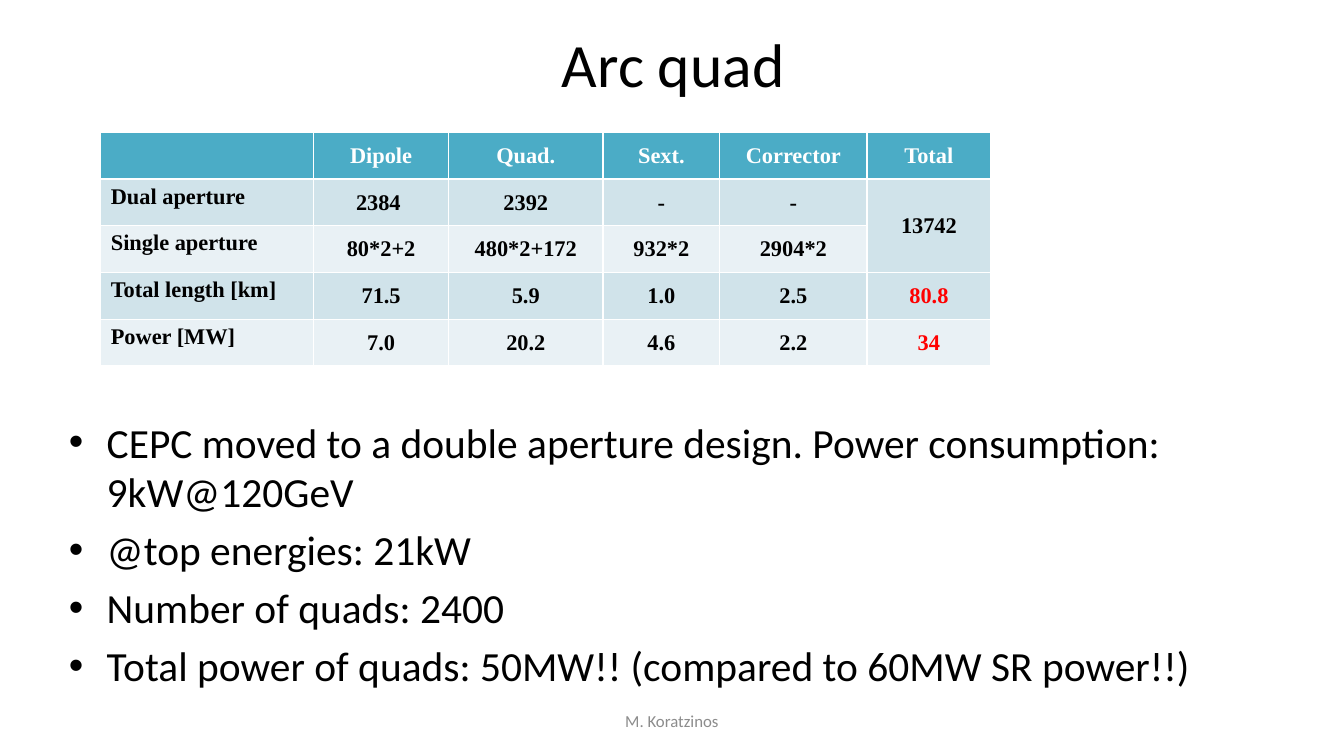
"""Build the arc quad slide with its magnet table and power notes."""
from pptx import Presentation
from pptx.dml.color import RGBColor
from pptx.enum.text import MSO_ANCHOR, MSO_AUTO_SIZE, PP_ALIGN
from pptx.util import Pt

TITLE = "Arc quad"
FOOTER = "M. Koratzinos"
BULLETS = [
    "CEPC moved to a double aperture design. Power consumption: 9kW@120GeV",
    "@top energies: 21kW",
    "Number of quads: 2400",
    "Total power of quads: 50MW!! (compared to 60MW SR power!!)",
]
MAGNETS = [
    ["", "Dipole", "Quad.", "Sext.", "Corrector", "Total"],
    ["Dual aperture", "2384 ", "2392", "-", "-", "13742"],
    ["Single aperture", "80*2+2", "480*2+172", "932*2", "2904*2", ""],
    ["Total length [km]", "71.5", "5.9", "1.0", "2.5", "80.8"],
    ["Power [MW]", "7.0", "20.2", "4.6", "2.2", "34"],
]
HIGHLIGHTS = {"80.8", "34"}
COLUMN_WIDTHS = [152, 96.5, 110.2, 83.5, 105.1, 88.6]
ROW_HEIGHT = 33.4
HEADER_FILL = "4BACC6"
BAND_FILLS = ["E9F1F5", "D0E3EA"]


def color(value):
    """Turn a hex string into a colour."""
    return RGBColor.from_string(value)


def place(shape, left, top, width, height):
    """Position a shape in points."""
    shape.left, shape.top = Pt(left), Pt(top)
    shape.width, shape.height = Pt(width), Pt(height)


def add_text(paragraph, text, size, font="Calibri", ink="000000", bold=False, align=None):
    """Add one formatted run to a paragraph."""
    run = paragraph.add_run()
    run.text = text
    run.font.size = Pt(size)
    run.font.name = font
    run.font.bold = bold
    run.font.color.rgb = color(ink)
    paragraph.alignment = align


def add_magnet_table(slide):
    """Add the table of magnet counts, lengths and power."""
    table = slide.shapes.add_table(
        len(MAGNETS), len(COLUMN_WIDTHS), Pt(72), Pt(94.5),
        Pt(sum(COLUMN_WIDTHS)), Pt(ROW_HEIGHT * len(MAGNETS))).table
    for column, width in zip(table.columns, COLUMN_WIDTHS):
        column.width = Pt(width)
    for row_index, texts in enumerate(MAGNETS):
        table.rows[row_index].height = Pt(ROW_HEIGHT)
        is_header = row_index == 0
        for column_index, text in enumerate(texts):
            cell = table.cell(row_index, column_index)
            cell.fill.solid()
            cell.fill.fore_color.rgb = color(HEADER_FILL if is_header else BAND_FILLS[row_index % 2])
            is_label = column_index == 0
            cell.vertical_anchor = MSO_ANCHOR.TOP if is_label else MSO_ANCHOR.MIDDLE
            if text:
                ink = "FFFFFF" if is_header else "FF0000" if text in HIGHLIGHTS else "000000"
                add_text(cell.text_frame.paragraphs[0], text, 16, "Times New Roman", ink, True,
                         PP_ALIGN.LEFT if is_label else PP_ALIGN.CENTER)
    table.cell(1, 5).merge(table.cell(2, 5))


def main():
    """Create the presentation and save it."""
    presentation = Presentation()
    presentation.slide_width, presentation.slide_height = Pt(960), Pt(540)
    slide = presentation.slides.add_slide(presentation.slide_layouts[1])

    title, body = slide.placeholders
    place(title, 49, 6, 864, 78)
    title.text_frame.vertical_anchor = MSO_ANCHOR.MIDDLE
    add_text(title.text_frame.paragraphs[0], TITLE, 44, align=PP_ALIGN.CENTER)

    place(body, 42, 294, 864, 198)
    frame = body.text_frame
    frame.auto_size = MSO_AUTO_SIZE.NONE
    for index, text in enumerate(BULLETS):
        paragraph = frame.add_paragraph() if index else frame.paragraphs[0]
        add_text(paragraph, text, 29.6)

    footer = slide.shapes.add_textbox(Pt(318), Pt(500.5), Pt(324), Pt(28.8)).text_frame
    footer.word_wrap = True
    footer.vertical_anchor = MSO_ANCHOR.MIDDLE
    add_text(footer.paragraphs[0], FOOTER, 12, ink="8C8C8C", align=PP_ALIGN.CENTER)

    add_magnet_table(slide)
    presentation.save("out.pptx")


if __name__ == "__main__":
    main()
